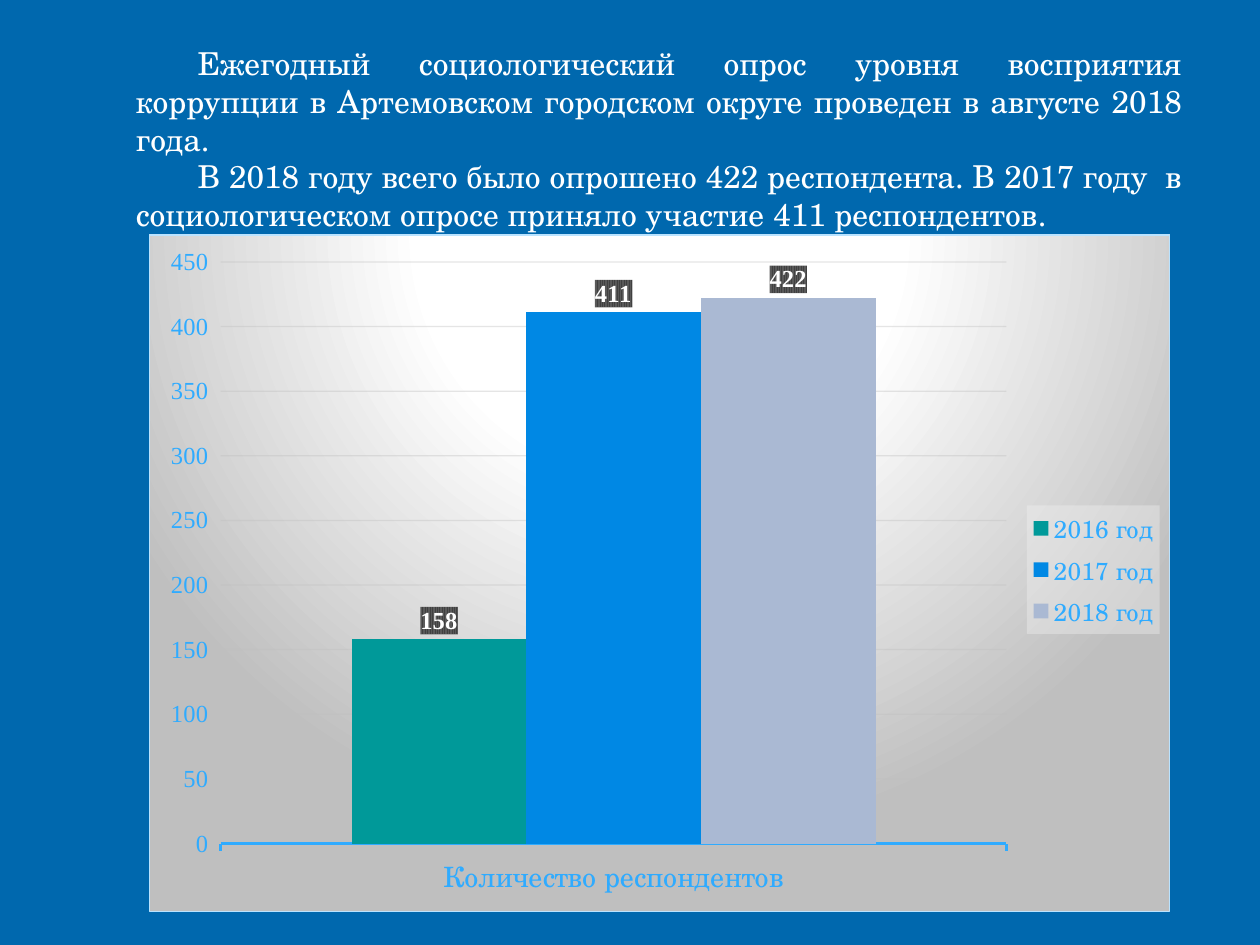
from lxml import etree
from pptx import Presentation
from pptx import util as u
from pptx.chart.data import CategoryChartData
from pptx.dml.color import RGBColor
from pptx.enum import chart as ch, text
from pptx.oxml import parse_xml
from pptx.oxml.ns import nsdecls, qn

PARAGRAPHS = [
    "Ежегодный социологический опрос уровня восприятия коррупции в "
    "Артемовском городском округе проведен в августе 2018 года.",
    "В 2018 году всего было опрошено 422 респондента. В 2017 году  в "
    "социологическом опросе приняло участие 411 респондентов.",
]
CATEGORY = "Количество респондентов"
RESPONDENTS = [("2016 год", 158, "teal"), ("2017 год", 411, "blue"),
               ("2018 год", 422, "lavender")]
COLORS = {
    "background": "0068AE", "white": "FFFFFF", "axis": "2FABFF",
    "teal": "009999", "blue": "0088E4", "lavender": "AAB9D3",
    "border": "BAE3FF", "edge": "BFBFBF", "grid": "BFBFBF",
    "legend": "F2F2F2", "label_dark": "404040", "label_light": "595959",
}
SERIF, ROMAN = "TeX Gyre Schola", "Times New Roman"
FONTS = {
    "body": dict(name=SERIF, size=18, color="white"),
    "chart": dict(name="Arial", size=10, color="white"),
    "category": dict(name=SERIF, size=16, color="axis"),
    "value": dict(name=ROMAN, size=14, color="axis"),
    "legend": dict(name=SERIF, size=14, color="axis"),
    "label": dict(name=ROMAN, size=14, color="white", bold=True),
}
WIDTH, HEIGHT = 10, 7.5
INTRO_BOX = (0.098, 0.059, 0.85, 0.175)   # shares of the slide
CHART_BOX = (0.118, 0.248, 0.811, 0.717)
PLOT_BOX = (0.07, 0.04, 0.77, 0.86)       # shares of the chart
LEGEND_BOX = (0.86, 0.4, 0.13, 0.19)


def rgb(key):
    return RGBColor.from_string(COLORS[key])


def set_font(font, role):
    for field, value in FONTS[role].items():
        if field == "color":
            font.color.rgb = rgb(value)
        else:
            setattr(font, field, u.Pt(value) if field == "size" else value)


def place(box):
    """Turn shares of the slide into left, top, width, height."""
    return [u.Inches(share * side) for share, side in zip(box, (WIDTH, HEIGHT) * 2)]


def solid(key, alpha=100):
    return (f'<a:solidFill><a:srgbClr val="{COLORS[key]}">'
            f'<a:alpha val="{alpha * 1000}"/></a:srgbClr></a:solidFill>')


def shape_format(inner):
    return parse_xml(f'<c:spPr {nsdecls("c", "a")}>{inner}</c:spPr>')


def manual_layout(box, inner=False):
    layout = etree.Element(qn("c:layout"))
    manual = etree.SubElement(layout, qn("c:manualLayout"))
    fields = [("layoutTarget", "inner")] if inner else []
    fields += [("xMode", "edge"), ("yMode", "edge"), *zip("xywh", map(str, box))]
    for tag, value in fields:
        etree.SubElement(manual, qn(f"c:{tag}")).set("val", value)
    return layout


def set_layout(parent, position, layout):
    for old in parent.findall(qn("c:layout")):
        parent.remove(old)
    parent.insert(position, layout)


def add_intro(slide):
    frame = slide.shapes.add_textbox(*place(INTRO_BOX)).text_frame
    frame.word_wrap = True
    frame.vertical_anchor = text.MSO_ANCHOR.MIDDLE
    for i, sentence in enumerate(PARAGRAPHS):
        paragraph = frame.paragraphs[0] if i == 0 else frame.add_paragraph()
        paragraph.alignment = text.PP_ALIGN.JUSTIFY
        paragraph._p.get_or_add_pPr().set("indent", str(u.Inches(0.49)))
        run = paragraph.add_run()
        run.text = sentence
        set_font(run.font, "body")


def style_axes(chart):
    category, value = chart.category_axis, chart.value_axis
    for axis, role in ((category, "category"), (value, "value")):
        axis.major_tick_mark = ch.XL_TICK_MARK.OUTSIDE
        axis.minor_tick_mark = ch.XL_TICK_MARK.NONE
        set_font(axis.tick_labels.font, role)
    category.format.line.color.rgb = rgb("axis")
    category.format.line.width = u.Pt(1.5)
    value.format.line.fill.background()
    value.minimum_scale, value.maximum_scale, value.major_unit = 0, 450, 50
    grid = value.major_gridlines.format.line
    grid.color.rgb = rgb("grid")
    grid.width = u.Pt(0.75)
    color = grid._ln.find(".//" + qn("a:srgbClr"))
    etree.SubElement(color, qn("a:alpha")).set("val", "40000")


def style_series(series, color):
    series.format.fill.solid()
    series.format.fill.fore_color.rgb = rgb(color)
    labels = series.data_labels
    labels.show_value = True
    labels.position = ch.XL_LABEL_POSITION.OUTSIDE_END
    set_font(labels.font, "label")
    labels._element.find(qn("c:txPr")).addprevious(shape_format(
        '<a:pattFill prst="narVert">'
        f'<a:fgClr><a:srgbClr val="{COLORS["label_dark"]}"/></a:fgClr>'
        f'<a:bgClr><a:srgbClr val="{COLORS["label_light"]}"/></a:bgClr></a:pattFill>'))


def style_legend(chart):
    chart.has_legend = True
    legend = chart.legend
    legend.position = ch.XL_LEGEND_POSITION.RIGHT
    legend.include_in_layout = False
    set_font(legend.font, "legend")
    element = legend._element
    set_layout(element, 1, manual_layout(LEGEND_BOX))
    element.find(qn("c:txPr")).addprevious(shape_format(solid("legend", 39)))


def add_survey_chart(slide):
    data = CategoryChartData()
    data.categories = [CATEGORY]
    for name, count, _ in RESPONDENTS:
        data.add_series(name, [count])
    chart = slide.shapes.add_chart(ch.XL_CHART_TYPE.COLUMN_CLUSTERED,
                                   *place(CHART_BOX), data).chart
    chart.has_title = False
    set_font(chart.font, "chart")
    plot = chart.plots[0]
    plot.gap_width, plot.overlap, plot.vary_by_categories = 150, 0, False
    for series, (_, _, color) in zip(plot.series, RESPONDENTS):
        style_series(series, color)
    style_axes(chart)
    style_legend(chart)

    root = chart._chartSpace.find(qn("c:chart"))
    set_layout(root.find(qn("c:plotArea")), 0, manual_layout(PLOT_BOX, inner=True))
    stops = "".join(
        f'<a:gs pos="{share * 1000}"><a:srgbClr val="{COLORS[key]}"/></a:gs>'
        for share, key in ((0, "white"), (39, "white"), (100, "edge")))
    root.addnext(shape_format(
        f'<a:gradFill><a:gsLst>{stops}</a:gsLst><a:path path="circle">'
        '<a:fillToRect l="50000" t="-80000" r="50000" b="180000"/></a:path></a:gradFill>'
        f'<a:ln w="{u.Pt(0.75)}">{solid("border")}</a:ln>'))


def main():
    deck = Presentation()
    deck.slide_width, deck.slide_height = u.Inches(WIDTH), u.Inches(HEIGHT)
    slide = deck.slides.add_slide(deck.slide_layouts[6])
    slide.background.fill.solid()
    slide.background.fill.fore_color.rgb = rgb("background")
    add_intro(slide)
    add_survey_chart(slide)
    deck.save("out.pptx")


if __name__ == "__main__":
    main()
